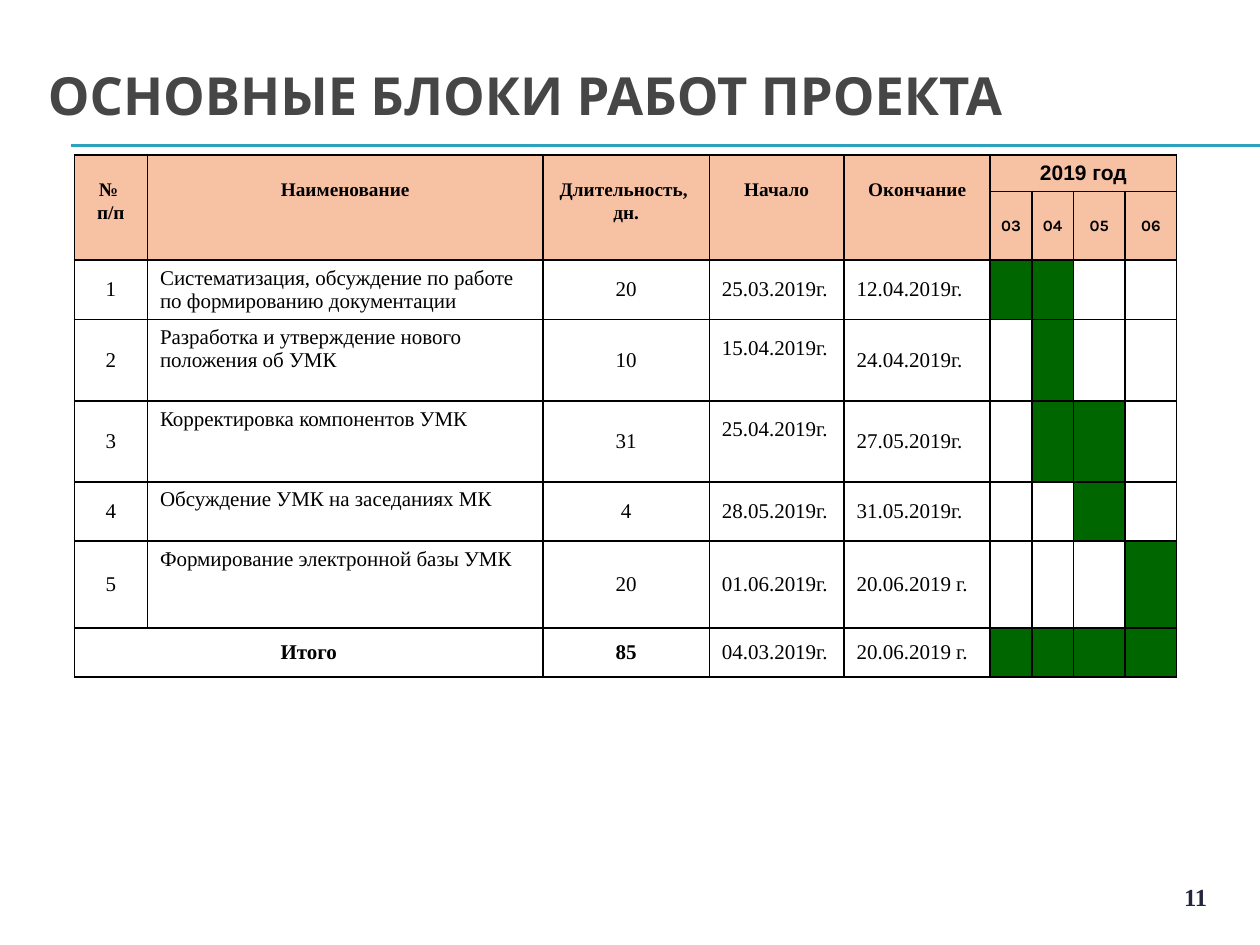
from lxml import etree
from pptx import Presentation
from pptx.dml.color import RGBColor
from pptx.enum.shapes import MSO_CONNECTOR
from pptx.enum.text import MSO_ANCHOR, PP_ALIGN
from pptx.oxml import parse_xml
from pptx.oxml.ns import nsdecls, qn
from pptx.util import Inches, Pt

LEFT, MID = PP_ALIGN.LEFT, PP_ALIGN.CENTER
TOP, CENTER = MSO_ANCHOR.TOP, MSO_ANCHOR.MIDDLE
STRAIGHT = MSO_CONNECTOR.STRAIGHT
SERIF, SANS, HEAD = "Times New Roman", "Arial", "Karla"
COLORS = {"title": "464646", "rule": "2DA2BF", "head": "F7C1A4", "bar": "006600",
          "white": "FFFFFF", "ink": "000000", "page": "23263C"}

COLS = [0.58, 3.14, 1.32, 1.07, 1.16, 0.33, 0.33, 0.41, 0.41]
ROWS = [0.29, 0.54, 0.47, 0.65, 0.64, 0.47, 0.69, 0.39]
HEADS = ["№ \nп/п", "Наименование", "Длительность, \nдн.", "Начало", "Окончание"]
MONTHS = ["03", "04", "05", "06"]
# number, name, days, start, end, active months
TASKS = [
    ("1", "Систематизация, обсуждение по работе по формированию документации",
     "20", "25.03.2019г.", "12.04.2019г.", ["03", "04"]),
    ("2", "Разработка и утверждение нового положения об УМК",
     "10", "15.04.2019г.", "24.04.2019г.", ["04"]),
    ("3", "Корректировка компонентов УМК",
     "31", "25.04.2019г.", "27.05.2019г.", ["04", "05"]),
    ("4", "Обсуждение УМК на заседаниях МК",
     "4", "28.05.2019г.", "31.05.2019г.", ["05"]),
    ("5", "Формирование электронной базы УМК",
     "20", "01.06.2019г.", "20.06.2019 г.", ["06"]),
    ("Итого", "", "85", "04.03.2019г.", "20.06.2019 г.", MONTHS),
]
RAISED = ["2", "3"]  # tasks whose start date sits above the middle


def color(name):
    return RGBColor.from_string(COLORS[name])


def write(frame, text, size=12, font=SERIF, ink="ink", bold=False, align=LEFT,
          spacing=None):
    for i, line in enumerate(text.split("\n")):
        para = frame.add_paragraph() if i else frame.paragraphs[0]
        para.alignment = align
        if spacing:
            para.line_spacing = spacing
        run = para.add_run()
        run.text = line
        run.font.size, run.font.name, run.font.bold = Pt(size), font, bold
        run.font.color.rgb = color(ink)


def inset(item, left, top, right, bottom):
    item.margin_left, item.margin_top = Inches(left), Inches(top)
    item.margin_right, item.margin_bottom = Inches(right), Inches(bottom)


def border(cell):
    """Draw a 1 pt line on all four sides of the cell."""
    props = cell._tc.get_or_add_tcPr()
    for i, side in enumerate(("lnL", "lnR", "lnT", "lnB")):
        props.insert(i, parse_xml(
            f'<a:{side} {nsdecls("a")} w="12700"><a:solidFill>'
            f'<a:srgbClr val="{COLORS["ink"]}"/></a:solidFill></a:{side}>'))


class Page:
    def __init__(self, deck):
        self.slide = deck.slides.add_slide(deck.slide_layouts[5])
        self.shapes = self.slide.shapes

    def rule(self, y):
        line = self.shapes.add_connector(
            STRAIGHT, Inches(0.56), Inches(y), Inches(10), Inches(y))
        line.line.color.rgb = color("rule")
        line.line.width = Pt(0.75)
        etree.SubElement(line._element.spPr, qn("a:effectLst"))

    def title(self, text):
        box = self.shapes.title
        box.left, box.top = Inches(0.28), Inches(0.29)
        box.width, box.height = Inches(9.5), Inches(0.92)
        box.text_frame.vertical_anchor = CENTER
        write(box.text_frame, text, size=30, font=HEAD, ink="title", bold=True)

    def grid(self, x, y):
        frame = self.shapes.add_table(len(ROWS), len(COLS), Inches(x), Inches(y),
                                      Inches(sum(COLS)), Inches(sum(ROWS)))
        table = frame.table
        for col, width in zip(table.columns, COLS):
            col.width = Inches(width)
        for row, height in zip(table.rows, ROWS):
            row.height = Inches(height)
        for cell in table.iter_cells():
            inset(cell, 0, 0, 0, 0)
            self.fill(cell, "white")
            border(cell)
        return table

    def fill(self, cell, name):
        cell.fill.solid()
        cell.fill.fore_color.rgb = color(name)

    def cell(self, cell, text, pad=(0.1, 0.05, 0.1, 0.05), anchor=CENTER, **style):
        inset(cell, *pad)
        cell.vertical_anchor = anchor
        write(cell.text_frame, text, **style)

    def number(self, text):
        box = self.shapes.add_textbox(Inches(9.22), Inches(6.95),
                                      Inches(0.54), Inches(0.31))
        box.text_frame.word_wrap = True
        write(box.text_frame, text, size=14, ink="page", bold=True, align=MID)


def header(page, table):
    first = len(HEADS)
    for c, text in enumerate(HEADS):
        table.cell(0, c).merge(table.cell(1, c))
        page.cell(table.cell(0, c), text, pad=(0.03, 0.18, 0.03, 0), anchor=TOP,
                  size=11, bold=True, align=MID, spacing=1.07)
    table.cell(0, first).merge(table.cell(0, len(COLS) - 1))
    page.cell(table.cell(0, first), "2019 год", anchor=TOP, font=SANS,
              bold=True, align=MID)
    for c, month in enumerate(MONTHS, first):
        page.cell(table.cell(1, c), month, pad=(0.04, 0.05, 0.04, 0.05),
                  size=9, font=HEAD, bold=True, align=MID)
    for r in range(2):
        for c in range(len(COLS)):
            page.fill(table.cell(r, c), "head")


def body(page, table):
    last = len(ROWS) - 1
    table.cell(last, 0).merge(table.cell(last, 1))
    for r, (*texts, active) in enumerate(TASKS, 2):
        for c, text in enumerate(texts):
            if not text:
                continue
            low = 0.24 if c == 3 and texts[0] in RAISED else 0.05
            page.cell(table.cell(r, c), text, pad=(0.1, 0.05, 0.1, low),
                      anchor=TOP if c == 1 else CENTER,
                      align=MID if c in (0, 2) else LEFT,
                      bold=r == last and c < 3)
        for c, month in enumerate(MONTHS, len(HEADS)):
            if month in active:
                page.fill(table.cell(r, c), "bar")


def main():
    deck = Presentation()
    deck.slide_width, deck.slide_height = Inches(10), Inches(7.5)
    page = Page(deck)
    for y in (1.15, 1.16):
        page.rule(y)
    page.title("ОСНОВНЫЕ БЛОКИ РАБОТ ПРОЕКТА")
    table = page.grid(0.59, 1.23)
    header(page, table)
    body(page, table)
    page.number("11")
    deck.save("out.pptx")


if __name__ == "__main__":
    main()
